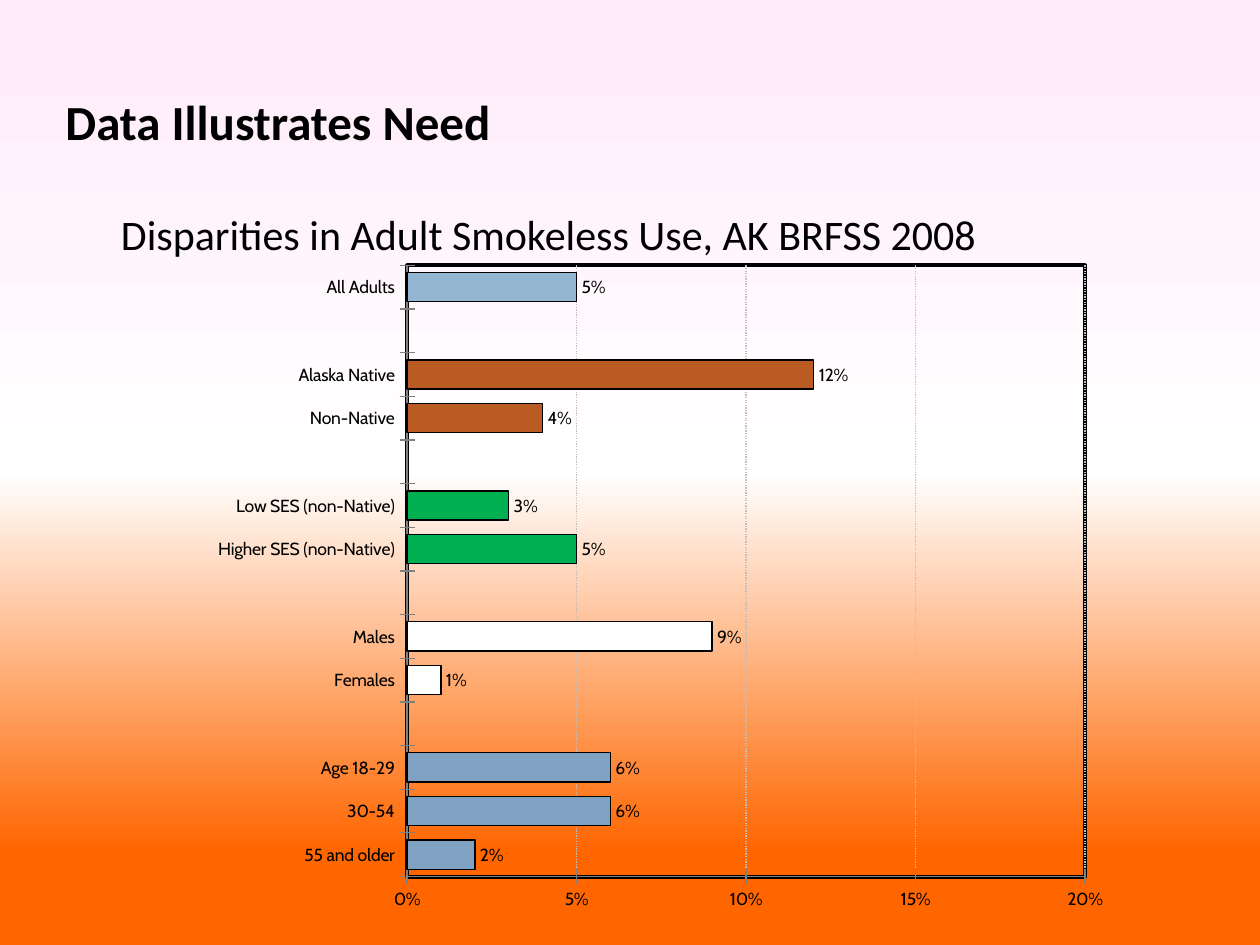
from dataclasses import dataclass

from pptx import Presentation
from pptx.chart.data import CategoryChartData as ChartData
from pptx.dml.color import RGBColor
from pptx.enum.chart import XL_CHART_TYPE as ChartType
from pptx.enum.chart import XL_LABEL_POSITION as LabelPosition
from pptx.enum.chart import XL_TICK_MARK as TickMark
from pptx.enum.dml import MSO_LINE_DASH_STYLE as Dash
from pptx.oxml import parse_xml
from pptx.oxml.ns import nsdecls
from pptx.util import Cm, Pt


@dataclass(frozen=True)
class Theme:
    text_font: str = "Calibri"
    chart_font: str = "Cabin"
    title_size: float = 28
    subtitle_size: float = 24
    chart_size: float = 10
    ink: str = "000000"
    grid: str = "BFBFBF"
    axis: str = "808080"
    overall: str = "94B6D2"
    ethnicity: str = "B95B22"
    income: str = "00B050"
    gender: str = "FFFFFF"
    age: str = "7FA2C3"
    # Stops from the bottom edge to the top edge
    background: tuple = ((10, "FF6600"), (50, "FFFFFF"), (100, "FFEBFA"))


THEME = Theme()

# Groups from the bottom of the chart to the top
GROUPS = [
    (THEME.age, [("55 and older", 0.02), ("30-54", 0.06), ("Age 18-29", 0.06)]),
    (THEME.gender, [("Females", 0.01), ("Males", 0.09)]),
    (THEME.income, [("Higher SES (non-Native)", 0.05), ("Low SES (non-Native)", 0.03)]),
    (THEME.ethnicity, [("Non-Native", 0.04), ("Alaska Native", 0.12)]),
    (THEME.overall, [("All Adults", 0.05)]),
]


def rgb(value):
    return RGBColor.from_string(value)


def style_font(font, name, size, bold=False):
    font.name, font.size, font.bold = name, Pt(size), bold
    font.color.rgb = rgb(THEME.ink)


def style_line(line, color, width, dash=None):
    line.color.rgb = rgb(color)
    line.width = Pt(width)
    if dash is not None:
        line.dash_style = dash


def add_text(slide, text, box, **font_format):
    frame = slide.shapes.add_textbox(*box).text_frame
    frame.word_wrap = True
    run = frame.paragraphs[0].add_run()
    run.text = text
    style_font(run.font, THEME.text_font, **font_format)


def add_background(slide):
    stops = "".join(
        f'<a:gs pos="{position * 1000}"><a:srgbClr val="{color}"/></a:gs>'
        for position, color in THEME.background
    )
    slide.element.cSld.insert(0, parse_xml(
        f'<p:bg {nsdecls("p", "a")}><p:bgPr><a:gradFill rotWithShape="1">'
        f'<a:gsLst>{stops}</a:gsLst><a:lin ang="16200000" scaled="0"/>'
        '</a:gradFill><a:effectLst/></p:bgPr></p:bg>'
    ))


def add_headings(slide, left, top, width):
    add_text(slide, "Data Illustrates Need", (left, top, width, Cm(1.45)),
             size=THEME.title_size, bold=True)
    add_text(slide, "Disparities in Adult Smokeless Use, AK BRFSS 2008",
             (left + Cm(1.12), top + Cm(2.34), width - Cm(1.95), Cm(1.24)),
             size=THEME.subtitle_size)


def frame_plot(chart):
    """Fix the inner plot area and give it a black border."""
    plot_area = chart.element.chart.plotArea
    for layout in plot_area.findall("{*}layout"):
        plot_area.remove(layout)
    fractions = {"x": 0.226, "y": 0.02, "w": 0.736, "h": 0.91}
    sizes = "".join(f'<c:{key} val="{value}"/>' for key, value in fractions.items())
    plot_area.insert(0, parse_xml(
        f'<c:layout {nsdecls("c")}><c:manualLayout><c:layoutTarget val="inner"/>'
        f'<c:xMode val="edge"/><c:yMode val="edge"/>{sizes}</c:manualLayout></c:layout>'
    ))
    plot_area.append(parse_xml(
        f'<c:spPr {nsdecls("c", "a")}><a:noFill/><a:ln w="{Pt(2.25)}"><a:solidFill>'
        f'<a:srgbClr val="{THEME.ink}"/></a:solidFill></a:ln></c:spPr>'
    ))


def add_disparity_chart(slide, box):
    # Bars, with an empty row between groups
    rows = []
    for color, bars in GROUPS:
        if rows:
            rows.append(("", None, None))
        rows += [(label, value, color) for label, value in bars]
    data = ChartData(number_format="0%")
    data.categories = [label for label, _, _ in rows]
    data.add_series("Series 1", [value for _, value, _ in rows])
    chart = slide.shapes.add_chart(ChartType.BAR_CLUSTERED, *box, data).chart
    chart.has_legend = chart.has_title = False
    style_font(chart.font, THEME.chart_font, THEME.chart_size)

    plot = chart.plots[0]
    plot.gap_width = 50
    plot.vary_by_categories = False
    series = plot.series[0]
    series.invert_if_negative = False
    series.format.fill.solid()
    series.format.fill.fore_color.rgb = rgb(THEME.overall)
    style_line(series.format.line, THEME.ink, 0.75)
    for index, (_, _, color) in enumerate(rows):
        if color:
            bar = series.points[index].format
            bar.fill.solid()
            bar.fill.fore_color.rgb = rgb(color)
            style_line(bar.line, THEME.ink, 0.75)

    # Value labels
    labels = series.data_labels
    labels.show_value = True
    labels.number_format, labels.number_format_is_linked = "0%", False
    labels.position = LabelPosition.OUTSIDE_END

    # Axes
    values = chart.value_axis
    values.minimum_scale, values.maximum_scale, values.major_unit = 0, 0.2, 0.05
    values.tick_labels.number_format = "0%"
    values.tick_labels.number_format_is_linked = False
    values.has_major_gridlines = True
    style_line(values.major_gridlines.format.line, THEME.grid, 0.75, Dash.ROUND_DOT)
    for axis in (values, chart.category_axis):
        axis.major_tick_mark = TickMark.CROSS
        style_line(axis.format.line, THEME.axis, 0.75)
    frame_plot(chart)


def main():
    presentation = Presentation()
    presentation.slide_width, presentation.slide_height = Cm(25.4), Cm(19.05)
    slide = presentation.slides.add_slide(presentation.slide_layouts[6])
    add_background(slide)
    add_headings(slide, Cm(1.07), Cm(1.73), Cm(23.06))
    add_disparity_chart(slide, (Cm(4.01), Cm(5.08), Cm(18.57), Cm(13.54)))
    presentation.save("out.pptx")


if __name__ == "__main__":
    main()
